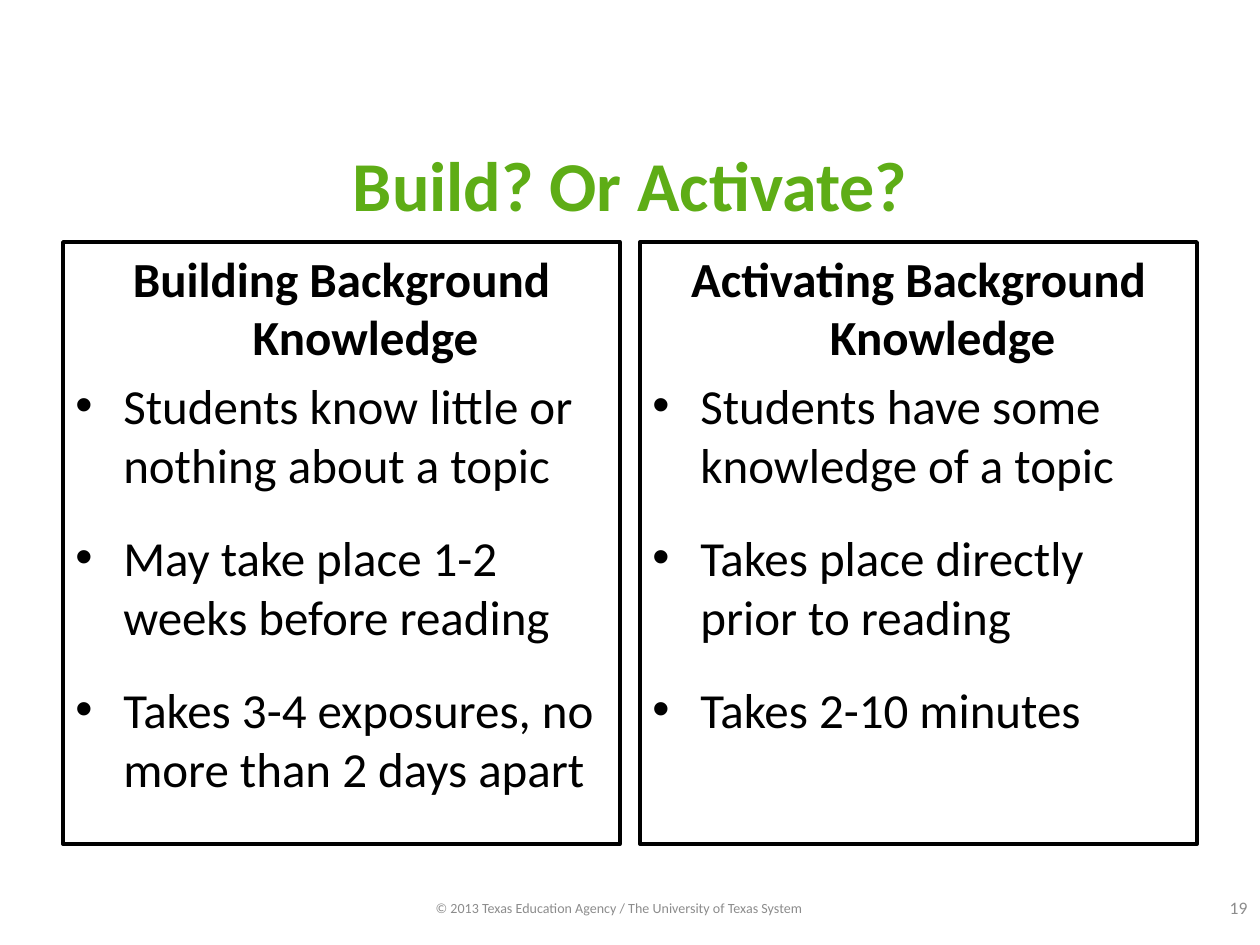
from lxml import etree
from pptx import Presentation
from pptx.dml.color import RGBColor
from pptx.enum.shapes import MSO_SHAPE
from pptx.enum.text import MSO_ANCHOR, PP_ALIGN
from pptx.oxml.ns import qn
from pptx.util import Inches, Pt

RECT = MSO_SHAPE.RECTANGLE
TOP, MID = MSO_ANCHOR.TOP, MSO_ANCHOR.MIDDLE
LEFT, CENTER = PP_ALIGN.LEFT, PP_ALIGN.CENTER
BLACK, GREEN, GRAY = "000000", "5EAD16", "8C8C8C"

TITLE = "Build? Or Activate?"
CARDS = [
    ("Building Background Knowledge", [
        "Students know little or nothing about a topic",
        "May take place 1-2 weeks before reading",
        "Takes 3-4 exposures, no more than 2 days apart",
    ]),
    ("Activating Background Knowledge", [
        "Students have some knowledge of a topic",
        "Takes place directly prior to reading",
        "Takes 2-10 minutes",
    ]),
]
NOTES = [
    ("19", 10, (9.58, 7.07, 0.5, 0.27)),
    ("© 2013 Texas Education Agency / The University of Texas System",
     8, (2.08, 7.08, 5.67, 0.25)),
]
EDGE, CARD_TOP, WIDTH, HEIGHT, GAP = 0.5, 1.92, 4.42, 4.78, 0.16
INDENT = 0.38


def color(code):
    return RGBColor.from_string(code)


def add_run(para, text, size, code, bold=False):
    run = para.add_run()
    run.text = text
    font = run.font
    font.name, font.size, font.bold = "Calibri", Pt(size), bold
    font.color.rgb = color(code)


def set_frame(shape, anchor):
    frame = shape.text_frame
    frame.word_wrap = True
    frame.vertical_anchor = anchor
    return frame


def indent(para, bullet=False):
    props = para._p.get_or_add_pPr()
    props.set("marL", str(Inches(INDENT)))
    props.set("indent", str(-Inches(INDENT)))
    if bullet:
        etree.SubElement(props, qn("a:buFont")).set("typeface", "Arial")
        etree.SubElement(props, qn("a:buChar")).set("char", "•")


def add_card(slide, left, head, items):
    box = slide.shapes.add_shape(
        RECT, Inches(left), Inches(CARD_TOP), Inches(WIDTH), Inches(HEIGHT))
    box.shadow.inherit = False
    box.fill.background()
    box.line.color.rgb = color(BLACK)
    box.line.width = Pt(2)
    frame = set_frame(box, TOP)
    para = frame.paragraphs[0]
    para.alignment = CENTER
    indent(para)
    add_run(para, head, 28, BLACK, True)
    for num, item in enumerate(items):
        para = frame.add_paragraph()
        para.alignment = LEFT
        indent(para, True)
        para.space_before = Pt(19.5 if num else 5.6)
        add_run(para, item, 28, BLACK)


def main():
    deck = Presentation()
    deck.slide_width, deck.slide_height = Inches(10), Inches(7.5)
    slide = deck.slides.add_slide(deck.slide_layouts[5])

    title = slide.shapes.title
    title.left, title.top = Inches(EDGE), Inches(1.04)
    title.width, title.height = Inches(9), Inches(0.84)
    para = set_frame(title, MID).paragraphs[0]
    para.alignment = CENTER
    add_run(para, TITLE, 40, GREEN, True)

    for num, (head, items) in enumerate(CARDS):
        add_card(slide, EDGE + num * (WIDTH + GAP), head, items)

    for text, size, place in NOTES:
        box = slide.shapes.add_textbox(*map(Inches, place))
        para = set_frame(box, MID).paragraphs[0]
        para.alignment = CENTER
        add_run(para, text, size, GRAY)

    deck.save("out.pptx")


if __name__ == "__main__":
    main()
